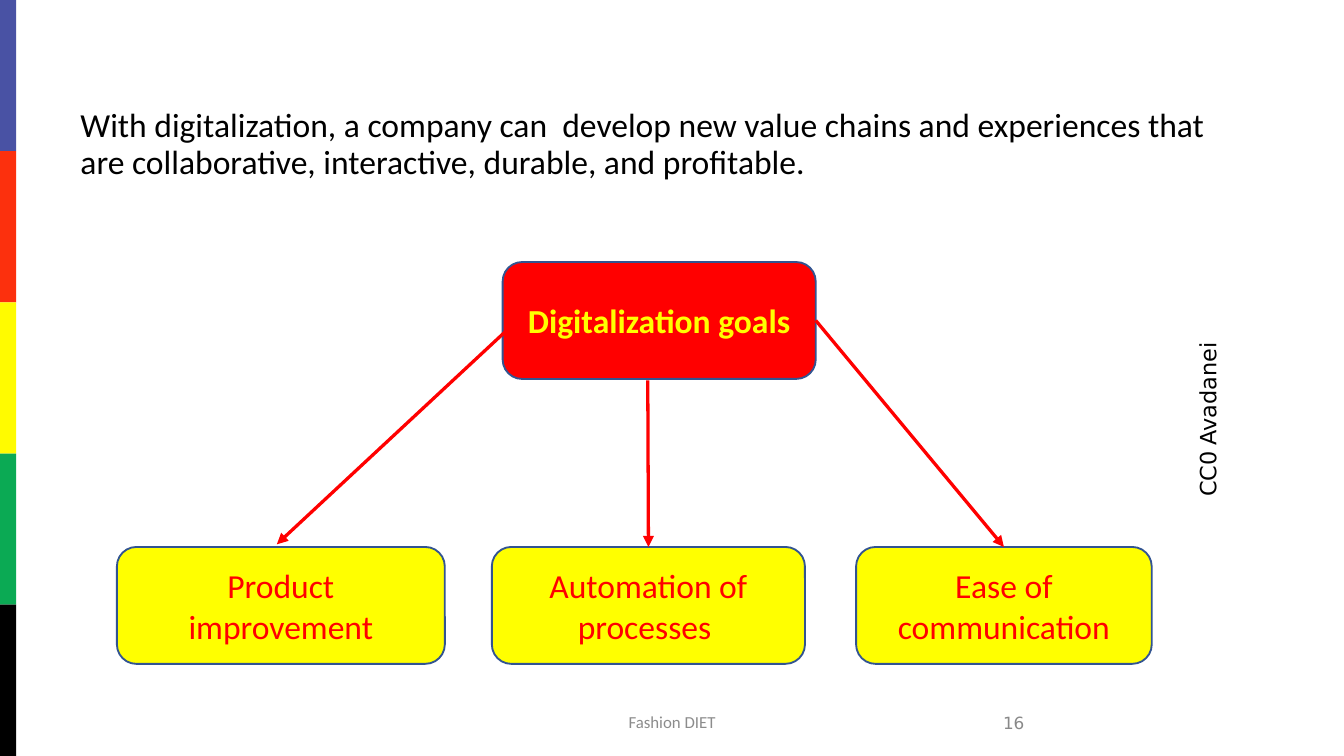
from pptx import Presentation
from pptx.dml.color import RGBColor
from pptx.enum import shapes, text
from pptx.oxml import ns
from pptx.util import Inches, Pt
from lxml import etree

WIDTH = 10
HEIGHT = WIDTH * 9 / 16
COLORS = {
    "blue": "4952A4", "orange": "FC300D", "lemon": "FFFB00", "green": "0BAA54",
    "black": "000000", "red": "FF0000", "yellow": "FFFF00", "outline": "325491",
    "footer": "8C8C8C", "number": "898989",
}
STRIPES = ["blue", "orange", "lemon", "green", "black"]
GOALS = [
    ("Product improvement", 0, 2.44),
    ("Automation of processes ", 2.79, 2.33),
    ("Ease of communication", 5.5, 2.2),
]


def color(name):
    """Return the named colour."""
    return RGBColor.from_string(COLORS[name])


def style(span, size, tint, font="Calibri", bold=False):
    """Set the font of a run."""
    span.font.name = font
    span.font.size = Pt(size)
    span.font.bold = bold
    span.font.color.rgb = color(tint)


def add_box(page, kind, left, top, width, height, fill):
    """Add a filled shape without line or shadow."""
    box = page.shapes.add_shape(
        kind, Inches(left), Inches(top), Inches(width), Inches(height))
    box.shadow.inherit = False
    box.fill.solid()
    box.fill.fore_color.rgb = color(fill)
    box.line.fill.background()
    return box


def add_label(page, left, top, width, height, words, size, tint,
              font="Calibri", align=text.PP_ALIGN.LEFT, anchor=text.MSO_ANCHOR.TOP):
    """Add a wrapping text box with one paragraph."""
    box = page.shapes.add_textbox(
        Inches(left), Inches(top), Inches(width), Inches(height))
    frame = box.text_frame
    frame.word_wrap = True
    frame.vertical_anchor = anchor
    frame.text = words
    para = frame.paragraphs[0]
    para.alignment = align
    style(para.runs[0], size, tint, font)
    return box


def add_node(page, left, top, width, words, fill, tint, bold=False):
    """Add a rounded box of the goals diagram."""
    box = add_box(page, shapes.MSO_SHAPE.ROUNDED_RECTANGLE,
                  left, top, width, 0.87, fill)
    box.line.color.rgb = color("outline")
    box.line.width = Pt(1)
    frame = box.text_frame
    frame.word_wrap = True
    frame.vertical_anchor = text.MSO_ANCHOR.MIDDLE
    frame.text = words
    para = frame.paragraphs[0]
    para.alignment = text.PP_ALIGN.CENTER
    style(para.runs[0], 18, tint, bold=bold)
    return box


def add_arrow(page, left, top, right, bottom):
    """Add a red line with an arrowhead at its end."""
    arrow = page.shapes.add_connector(
        shapes.MSO_CONNECTOR.STRAIGHT,
        Inches(left), Inches(top), Inches(right), Inches(bottom))
    arrow.line.color.rgb = color("red")
    arrow.line.width = Pt(1.75)
    etree.SubElement(arrow.line._get_or_add_ln(), ns.qn("a:tailEnd"), type="triangle")
    etree.SubElement(arrow._element.spPr, ns.qn("a:effectLst"))
    return arrow


def add_stripes(page, left, top, width, height):
    """Stack the coloured stripes in the given box."""
    step = height / len(STRIPES)
    for row, fill in enumerate(STRIPES):
        add_box(page, shapes.MSO_SHAPE.RECTANGLE,
                left, top + row * step, width, step, fill)


def add_diagram(page, left, top):
    """Draw the main box, its three goals and the arrows."""
    goals = [add_node(page, left + offset, top + 2.12, width, words, "yellow", "red")
             for words, offset, width in GOALS]
    main_box = add_node(page, left + 2.87, top, 2.33,
                        "Digitalization goals", "red", "yellow", bold=True)
    add_arrow(page, left + 2.92, top + 0.49, left + 1.19, top + 2.1)
    slanted = add_arrow(page, left + 5.2, top + 0.43, left + 6.61, top + 2.12)
    slanted.begin_connect(main_box, 3)
    slanted.end_connect(goals[2], 0)
    upright = add_arrow(page, left + 3.95, top + 0.88, left + 3.96, top + 2.12)
    upright.end_connect(goals[1], 0)


def add_intro(page, left, top, width, height):
    """Add the opening sentence."""
    box = add_label(
        page, left, top, width, height,
        "With digitalization, a company can  develop new value chains and experiences "
        "that are collaborative, interactive, durable, and profitable.", 18, "black")
    box.text_frame.paragraphs[0].line_spacing = 0.9


def add_footer(page, left, top):
    """Add the footer text and the page number."""
    middle = text.MSO_ANCHOR.MIDDLE
    add_label(page, left, top, 3.38, 0.3, "Fashion DIET", 9, "footer",
              align=text.PP_ALIGN.CENTER, anchor=middle)
    add_label(page, left + 2.16, top + 0.01, 2.25, 0.3, "16", 9, "number",
              "DejaVu Sans", text.PP_ALIGN.RIGHT, middle)


def add_credit(page, left, top, width, height):
    """Add the upright credit line."""
    box = add_label(page, left, top, width, height, "CC0", 12, "black", "DejaVu Sans")
    box.rotation = 270
    for words, size in ((" ", 10), ("Avadanei", 12)):
        span = box.text_frame.paragraphs[0].add_run()
        span.text = words
        style(span, size, "black", "DejaVu Sans")


def main():
    """Build and save the deck."""
    deck = Presentation()
    deck.slide_width, deck.slide_height = Inches(WIDTH), Inches(HEIGHT)
    page = deck.slides.add_slide(deck.slide_layouts[6])
    add_stripes(page, 0, 0, 0.12, HEIGHT)
    add_intro(page, 0.5, 0.76, 8.62, 0.63)
    add_footer(page, 3.31, 5.22)
    add_diagram(page, 0.87, 1.95)
    add_credit(page, 8.14, 2.8, 1.69, 0.3)
    deck.save("out.pptx")


if __name__ == "__main__":
    main()
